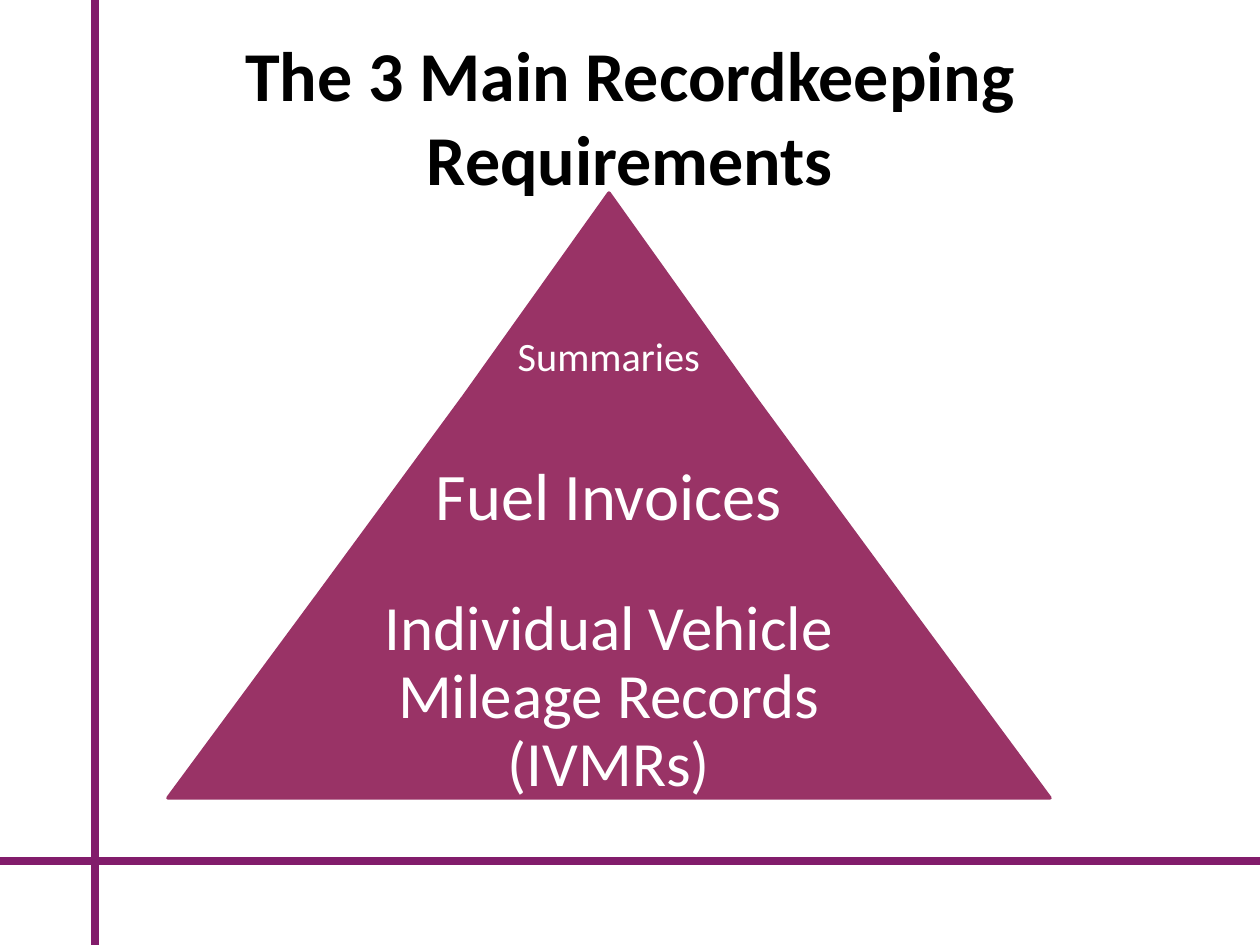
from lxml import etree
from pptx import Presentation, util as u
from pptx.dml.color import RGBColor
from pptx.enum import shapes, text
from pptx.oxml.ns import qn

SCALE = 914400 / 126  # EMU per px
FONT = "Calibri"
RULE, TIER, WHITE, BLACK = "821C6B", "993366", "FFFFFF", "000000"


def px(n):
    return u.Emu(round(n * SCALE))


def write(frame, wording, size, color, insets, bold=False):
    frame.word_wrap = True
    frame.vertical_anchor = text.MSO_ANCHOR.MIDDLE
    frame.margin_left, frame.margin_top, frame.margin_right, frame.margin_bottom = map(px, insets)
    frame.text = wording
    paragraph = frame.paragraphs[0]
    paragraph.alignment = text.PP_ALIGN.CENTER
    font = paragraph.runs[0].font
    font.name, font.size, font.bold = FONT, u.Pt(size), bold
    font.color.rgb = RGBColor.from_string(color)
    return paragraph


prs = Presentation()
prs.slide_width, prs.slide_height = px(1260), px(945)
slide = prs.slides.add_slide(prs.slide_layouts[6])

# Crossing rules at the left and bottom
for ends in [(0, 861, 1260, 861), (95, 0, 95, 945)]:
    rule = slide.shapes.add_connector(shapes.MSO_CONNECTOR.STRAIGHT, *map(px, ends))
    rule.line.color.rgb = RGBColor.from_string(RULE)
    rule.line.width = u.Pt(4.5)
    etree.SubElement(rule._element.spPr, qn("a:effectLst"))

# Title
title = slide.shapes.add_textbox(px(63), px(0), px(1134), px(231))
write(title.text_frame, "The 3 Main Recordkeeping Requirements", 40, BLACK, (13, 6, 13, 6), bold=True)

# Pyramid: each tier widens by the same step on both sides
CENTER, STEP = 609, 147
tiers = [
    (193, 399, "Summaries", 23, (4, 128, 4, 4)),
    (399, 599, "Fuel Invoices", 38, (110, 6, 110, 6)),
    (599, 798, "Individual Vehicle Mileage Records (IVMRs)", 36, (161, 6, 161, 6)),
]
for level, (top, bottom, wording, size, insets) in enumerate(tiers):
    upper, lower = level * STEP, (level + 1) * STEP
    outline = slide.shapes.build_freeform(CENTER - lower, bottom, scale=SCALE)
    outline.add_line_segments(
        [(CENTER - upper, top), (CENTER + upper, top), (CENTER + lower, bottom)], close=True)
    tier = outline.convert_to_shape()
    tier.shadow.inherit = False
    tier.fill.solid()
    tier.fill.fore_color.rgb = RGBColor.from_string(TIER)
    tier.line.color.rgb = RGBColor.from_string(TIER)
    tier.line.width = u.Pt(2)
    write(tier.text_frame, wording, size, WHITE, insets).line_spacing = 0.9

prs.save("out.pptx")
